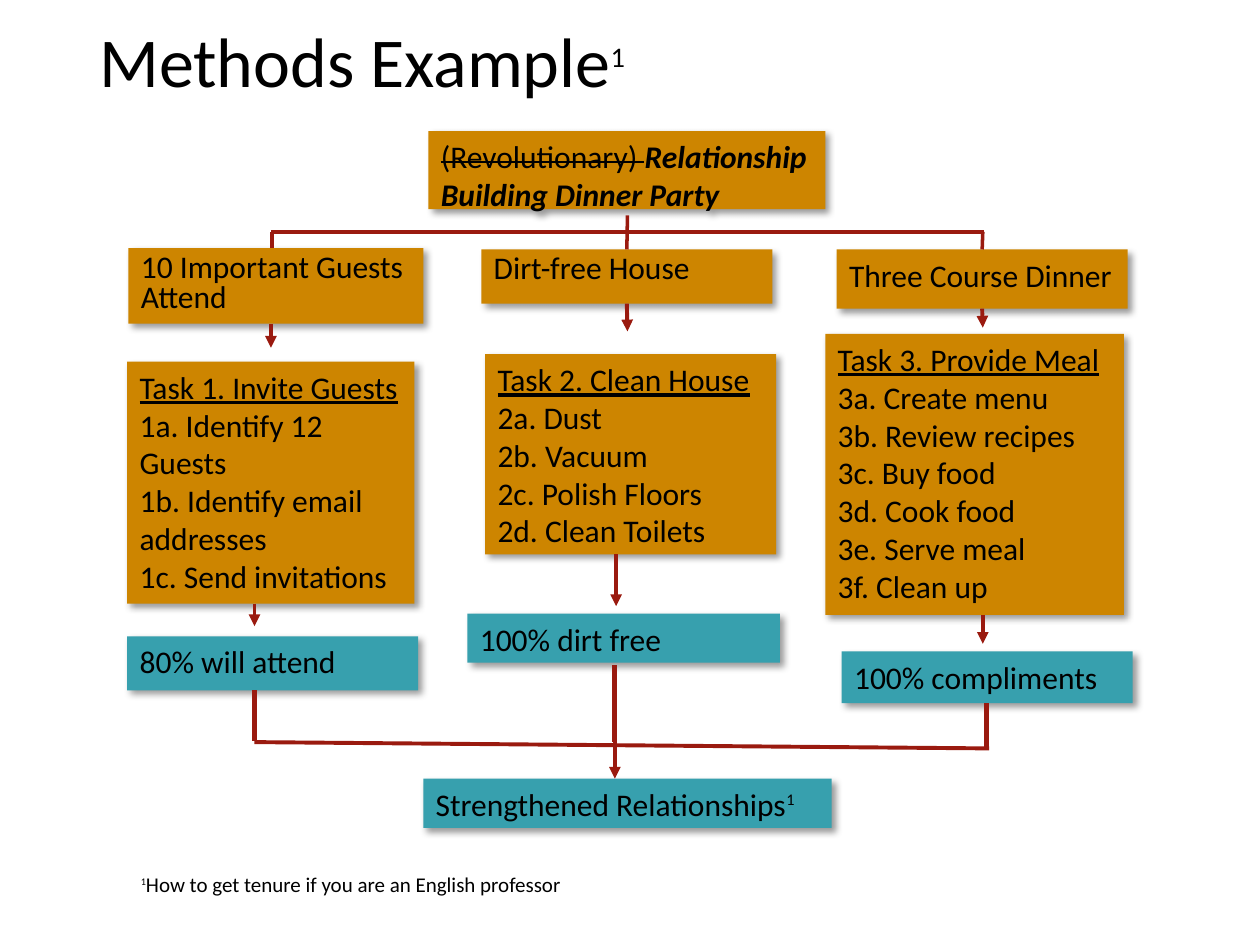
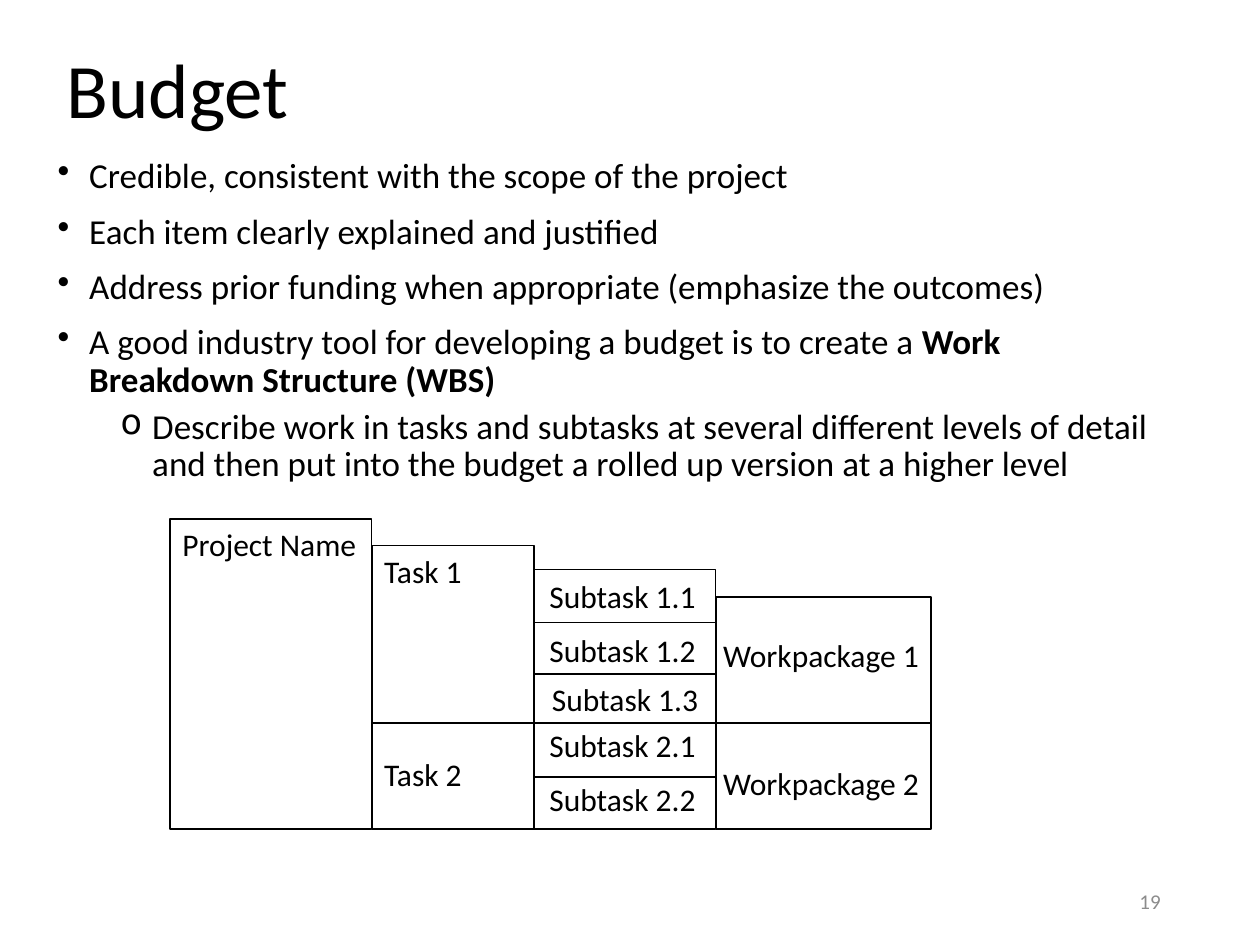
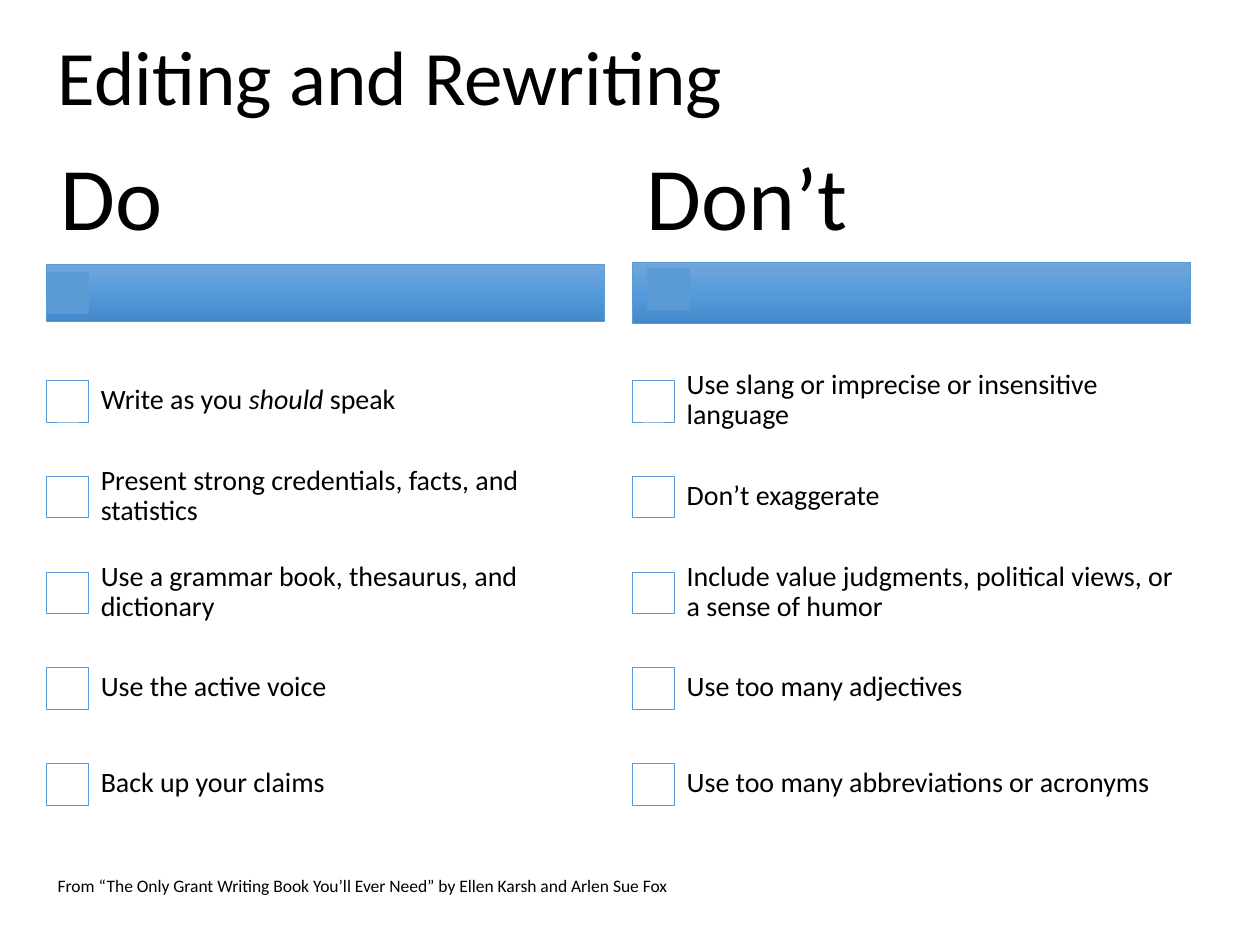
from copy import deepcopy
from dataclasses import dataclass
from typing import Optional, Sequence, Union

from lxml.etree import SubElement
from pptx import Presentation
from pptx.dml.color import RGBColor
from pptx.enum.shapes import MSO_CONNECTOR, MSO_SHAPE
from pptx.enum.text import MSO_ANCHOR, PP_ALIGN
from pptx.oxml.ns import qn
from pptx.util import Inches, Pt

FONT = "Calibri"
BLACK = RGBColor(0x00, 0x00, 0x00)
WHITE = RGBColor(0xFF, 0xFF, 0xFF)
GRAY = RGBColor(0x8C, 0x8C, 0x8C)
ORANGE = RGBColor(0xCD, 0x85, 0x00)
TEAL = RGBColor(0x37, 0xA0, 0xAE)
RED = RGBColor(0x9A, 0x1A, 0x0F)
BLUE = RGBColor(0x5B, 0x9B, 0xD5)
BAND_COLORS = (
    RGBColor(0x71, 0xA6, 0xDB),
    RGBColor(0x55, 0x9B, 0xDB),
    RGBColor(0x44, 0x8A, 0xCA),
)
DEFAULT_INSETS = (0.1, 0.05, 0.1, 0.05)
BOTTOM, TOP = 2, 0


@dataclass(frozen=True)
class Run:
    text: str
    size: Optional[float] = None
    bold: bool = False
    italic: bool = False
    underline: bool = False
    strike: bool = False
    superscript: bool = False


Paragraph = Sequence[Union[str, Run]]


@dataclass(frozen=True)
class Area:
    left: float
    top: float
    width: float
    height: float

    def lengths(self) -> tuple:
        return tuple(Inches(v) for v in (self.left, self.top, self.width, self.height))


@dataclass(frozen=True)
class FlowBox:
    area: Area
    color: RGBColor
    paragraphs: Sequence[Paragraph]
    line_spacing: float = 1.0


@dataclass(frozen=True)
class FlowLine:
    """A straight line; begin_box and end_box name the boxes it is joined to."""

    start: tuple
    end: tuple
    width: float = 2.25
    arrow: bool = False
    begin_box: Optional[str] = None
    end_box: Optional[str] = None


@dataclass(frozen=True)
class Cell:
    label: str
    area: Area
    inset_left: float = 0.1
    inset_top: float = 0.05


@dataclass(frozen=True)
class Column:
    heading: str
    left: float
    band_top: float
    band_height: float
    marker: tuple
    items: Sequence[Paragraph]


def write_text(shape, paragraphs: Sequence[Paragraph], *, size: float = 18,
               color: RGBColor = BLACK, anchor=MSO_ANCHOR.TOP,
               alignment=PP_ALIGN.LEFT, line_spacing: float = 1.0,
               insets: tuple = DEFAULT_INSETS) -> list:
    frame = shape.text_frame
    frame.word_wrap = True
    frame.vertical_anchor = anchor
    (frame.margin_left, frame.margin_top,
     frame.margin_right, frame.margin_bottom) = (Inches(inset) for inset in insets)
    for index, parts in enumerate(paragraphs):
        paragraph = frame.add_paragraph() if index else frame.paragraphs[0]
        paragraph.alignment = alignment
        paragraph.line_spacing = line_spacing
        for part in parts:
            style = part if isinstance(part, Run) else Run(part)
            run = paragraph.add_run()
            run.text = style.text
            font = run.font
            font.name = FONT
            font.size = Pt(style.size or size)
            font.color.rgb = color
            font.bold = style.bold
            font.italic = style.italic
            font.underline = style.underline
            properties = run._r.get_or_add_rPr()
            if style.strike:
                properties.set("strike", "sngStrike")
            if style.superscript:
                properties.set("baseline", "40000")
    return list(frame.paragraphs)


def add_text(slide, area: Area, paragraphs: Sequence[Paragraph], **text_format) -> list:
    return write_text(slide.shapes.add_textbox(*area.lengths()), paragraphs, **text_format)


def add_title(slide, area: Area, *parts: Union[str, Run], size: float = 44) -> None:
    add_text(slide, area, [parts], size=size, anchor=MSO_ANCHOR.MIDDLE, line_spacing=0.9)


def add_rectangle(slide, area: Area, *, fill: Optional[RGBColor] = None,
                  line: Optional[RGBColor] = None, line_width: float = 1):
    shape = slide.shapes.add_shape(MSO_SHAPE.RECTANGLE, *area.lengths())
    shape.shadow.inherit = False
    if fill is None:
        shape.fill.background()
    else:
        shape.fill.solid()
        shape.fill.fore_color.rgb = fill
    if line is None:
        shape.line.fill.background()
    else:
        shape.line.color.rgb = line
        shape.line.width = Pt(line_width)
    return shape


def add_shadow(shape) -> None:
    effects = shape._element.spPr.find(qn("a:effectLst"))
    shadow = SubElement(effects, qn("a:outerShdw"), blurRad=str(Pt(4)), dist=str(Pt(3)),
                        dir="2700000", algn="tl", rotWithShape="0")
    color = SubElement(shadow, qn("a:srgbClr"), val=str(BLACK))
    SubElement(color, qn("a:alpha"), val="40000")


def add_flow_box(slide, box: FlowBox):
    shape = add_rectangle(slide, box.area, fill=box.color)
    add_shadow(shape)
    write_text(shape, box.paragraphs, line_spacing=box.line_spacing)
    return shape


def add_flow_line(slide, line: FlowLine, shapes: dict) -> None:
    connector = slide.shapes.add_connector(
        MSO_CONNECTOR.STRAIGHT, *(Inches(v) for v in line.start + line.end))
    connector.line.color.rgb = RED
    connector.line.width = Pt(line.width)
    if line.begin_box:
        connector.begin_connect(shapes[line.begin_box], BOTTOM)
    if line.end_box:
        connector.end_connect(shapes[line.end_box], TOP)
    if line.arrow:
        SubElement(connector.line._get_or_add_ln(), qn("a:tailEnd"), type="triangle")
    SubElement(connector._element.spPr, qn("a:effectLst"))


def set_bullet(paragraph, character: str, left: float, space_before: float) -> None:
    paragraph.space_before = Pt(space_before)
    properties = paragraph._p.get_or_add_pPr()
    properties.set("marL", str(Inches(left)))
    properties.set("indent", str(Inches(-0.25)))
    SubElement(properties, qn("a:buChar"), char=character)


def fill_band(shape) -> None:
    """Fill with a three-step gradient from top to bottom."""
    shape.fill.gradient()
    shape.fill.gradient_angle = 270
    stop_list = shape._element.spPr.find(f".//{qn('a:gsLst')}")
    stop_list.insert(1, deepcopy(stop_list[0]))
    for index, (stop, color) in enumerate(zip(shape.fill.gradient_stops, BAND_COLORS)):
        stop.position = index / 2
        stop.color.rgb = color


FLOW_BOXES = {
    "party": FlowBox(Area(3.4, 1.04, 3.15, 0.62), ORANGE, [[
        Run("(Revolutionary) ", strike=True),
        Run("Relationship Building Dinner Party", bold=True, italic=True)]]),
    "guests": FlowBox(Area(1.02, 1.97, 2.34, 0.6), ORANGE,
                      [["10 Important Guests Attend"]], 0.8),
    "house": FlowBox(Area(3.82, 1.98, 2.31, 0.43), ORANGE, [["Dirt-free House"]], 0.8),
    "dinner": FlowBox(Area(6.64, 1.98, 2.31, 0.47), ORANGE, [["Three Course Dinner"]]),
    "invite": FlowBox(Area(1.01, 2.87, 2.28, 1.92), ORANGE, [
        [Run("Task 1. Invite Guests", underline=True)],
        ["1a. Identify 12 Guests"],
        ["1b. Identify email addresses"],
        ["1c. Send invitations"]]),
    "clean": FlowBox(Area(3.85, 2.81, 2.31, 1.59), ORANGE, [
        [Run("Task 2. Clean House", underline=True)],
        ["2a. Dust"], ["2b. Vacuum"], ["2c. Polish Floors"], ["2d. Clean Toilets"]]),
    "meal": FlowBox(Area(6.55, 2.65, 2.37, 2.23), ORANGE, [
        [Run("Task 3. Provide Meal", underline=True)],
        ["3a. Create menu"], ["3b. Review recipes"], ["3c. Buy food"],
        ["3d. Cook food"], ["3e. Serve meal"], ["3f. Clean up"]]),
    "attendance": FlowBox(Area(1.01, 5.05, 2.31, 0.43), TEAL, [["80% will attend"]]),
    "dirt free": FlowBox(Area(3.71, 4.87, 2.48, 0.39), TEAL, [["100% dirt free"]]),
    "compliments": FlowBox(Area(6.68, 5.17, 2.31, 0.41), TEAL, [["100% compliments"]]),
    "result": FlowBox(Area(3.36, 6.18, 3.24, 0.39), TEAL, [[
        "Strengthened Relationships", Run("1", size=16, superscript=True)]]),
}

FLOW_LINES = [
    FlowLine((2.15, 1.84), (7.81, 1.84), 2),
    FlowLine((2.16, 1.84), (2.16, 1.97), 2),
    FlowLine((4.98, 1.71), (4.98, 1.98), 2, end_box="house"),
    FlowLine((7.8, 1.84), (7.8, 1.98), 2, end_box="dinner"),
    FlowLine((2.15, 2.57), (2.15, 2.76), arrow=True),
    FlowLine((4.98, 2.41), (4.98, 2.63), arrow=True, begin_box="house"),
    FlowLine((7.8, 2.45), (7.8, 2.6), arrow=True, begin_box="dinner"),
    FlowLine((2.02, 4.79), (2.02, 4.97), arrow=True),
    FlowLine((4.89, 4.4), (4.89, 4.81), arrow=True),
    FlowLine((7.8, 4.88), (7.8, 5.11), arrow=True),
    FlowLine((2.02, 5.89), (7.85, 5.94)),
    FlowLine((2.02, 5.48), (2.02, 5.88), 3),
    FlowLine((4.88, 5.28), (4.88, 5.89), 3),
    FlowLine((7.83, 5.58), (7.83, 5.94), 3),
    FlowLine((4.88, 5.76), (4.88, 6.18), arrow=True),
]

WBS_CELLS = [
    Cell("Project Name", Area(1.35, 4.12, 1.6, 2.46)),
    Cell("Task 1", Area(2.95, 4.33, 1.29, 1.41)),
    Cell("Task 2", Area(2.95, 5.74, 1.29, 0.84), inset_top=0.25),
    Cell("Subtask 1.1", Area(4.24, 4.52, 1.44, 0.42), 0.12, 0.06),
    Cell("Subtask 1.2", Area(4.24, 4.94, 1.44, 0.41), 0.12, 0.07),
    Cell("Subtask 1.3", Area(4.24, 5.35, 1.44, 0.39), 0.14),
    Cell("Subtask 2.1", Area(4.24, 5.74, 1.44, 0.43), 0.12, 0.02),
    Cell("Subtask 2.2", Area(4.24, 6.17, 1.44, 0.41), 0.12, 0.02),
    Cell("Workpackage 1", Area(5.68, 4.74, 1.71, 1), 0.06, 0.31),
    Cell("Workpackage 2", Area(5.68, 5.74, 1.71, 0.84), 0.06, 0.32),
]

BUDGET_POINTS = [
    ["Credible, consistent with the scope of the project"],
    ["Each item clearly explained and justified"],
    ["Address prior funding when appropriate (emphasize the outcomes)"],
    ["A good industry tool for developing a budget is to create a ",
     Run("Work Breakdown Structure (WBS)", bold=True)],
    ["Describe work in tasks and subtasks at several different levels of detail "
     "and then put into the budget a rolled up version at a higher level"],
]

ADVICE_COLUMNS = [
    Column("Do", 0.37, 2.1, 0.45, (0.37, 2.16), [
        ["Write as you ", Run("should ", italic=True), "speak"],
        ["Present strong credentials, facts, and statistics"],
        ["Use a grammar book, thesaurus, and dictionary"],
        ["Use the active voice"],
        ["Back up your claims"]]),
    Column("Don’t", 5.02, 2.08, 0.49, (5.14, 2.13), [
        ["Use slang or imprecise or insensitive language"],
        ["Don’t exaggerate"],
        ["Include value judgments, political views, or a sense of humor"],
        ["Use too many adjectives"],
        ["Use too many abbreviations or acronyms"]]),
]
COLUMN_WIDTH = 4.43
ROW_TOP, ROW_HEIGHT = 2.8, 0.76
CHECKBOX_SIZE = 0.33


def build_methods(slide) -> None:
    add_title(slide, Area(0.69, 0.13, 8.62, 0.77), "Methods Example",
              Run("1", size=28, superscript=True), size=40)
    shapes = {name: add_flow_box(slide, box) for name, box in FLOW_BOXES.items()}
    for line in FLOW_LINES:
        add_flow_line(slide, line, shapes)
    add_text(slide, Area(1.02, 6.87, 4.2, 0.3), [[
        Run("1", size=10, superscript=True),
        "How to get tenure if you are an English professor"]], size=12)


def build_budget(slide) -> None:
    add_title(slide, Area(0.43, 0.02, 8.62, 1.45), "Budget")
    *points, detail = add_text(slide, Area(0.36, 1.21, 8.92, 2.99), BUDGET_POINTS,
                               size=20, line_spacing=0.9)
    for paragraph in points:
        set_bullet(paragraph, "•", 0.25, 10)
    set_bullet(detail, "o", 0.75, 5)
    for cell in WBS_CELLS:
        shape = add_rectangle(slide, cell.area, line=BLACK)
        write_text(shape, [[cell.label]],
                   insets=(cell.inset_left, cell.inset_top, 0.05, 0))
    add_text(slide, Area(7.06, 6.95, 2.25, 0.4), [["19"]], size=12, color=GRAY,
             anchor=MSO_ANCHOR.MIDDLE, alignment=PP_ALIGN.RIGHT)


def add_checkbox(slide, left: float, top: float, fill: RGBColor):
    return add_rectangle(slide, Area(left, top, CHECKBOX_SIZE, CHECKBOX_SIZE),
                         fill=fill, line=BLUE, line_width=0.5)


def add_advice_column(slide, column: Column) -> None:
    add_text(slide, Area(column.left, 1.13, COLUMN_WIDTH, 0.94), [[column.heading]],
             size=51, anchor=MSO_ANCHOR.MIDDLE, line_spacing=0.9,
             insets=(0.11, 0.07, 0.11, 0.07))
    band_area = Area(column.left, column.band_top, COLUMN_WIDTH, column.band_height)
    fill_band(add_rectangle(slide, band_area, line=BLUE, line_width=0.5))
    marker = add_checkbox(slide, *column.marker, BLUE)
    marker_color = marker._element.spPr.find(f"{qn('a:solidFill')}/{qn('a:srgbClr')}")
    SubElement(marker_color, qn("a:alpha"), val="90000")
    for row, item in enumerate(column.items):
        top = ROW_TOP + row * ROW_HEIGHT
        add_checkbox(slide, column.left, top + 0.22, WHITE)
        add_text(slide, Area(column.left + 0.31, top, COLUMN_WIDTH - 0.31, ROW_HEIGHT),
                 [item], size=16, anchor=MSO_ANCHOR.MIDDLE, line_spacing=0.9,
                 insets=(0.12,) * 4)


def build_editing(slide) -> None:
    add_title(slide, Area(0.36, 0.14, 9.64, 0.99), "Editing and Rewriting")
    for column in ADVICE_COLUMNS:
        add_advice_column(slide, column)
    add_title(slide, Area(0.36, 6.75, 9.64, 0.57),
              "From “The Only Grant Writing Book You’ll Ever Need” "
              "by Ellen Karsh and Arlen Sue Fox", size=10)


def main() -> None:
    presentation = Presentation()
    presentation.slide_width = Inches(10)
    presentation.slide_height = Inches(7.5)
    blank_layout = presentation.slide_layouts[6]
    for build in (build_methods, build_budget, build_editing):
        build(presentation.slides.add_slide(blank_layout))
    presentation.save("out.pptx")


if __name__ == "__main__":
    main()
